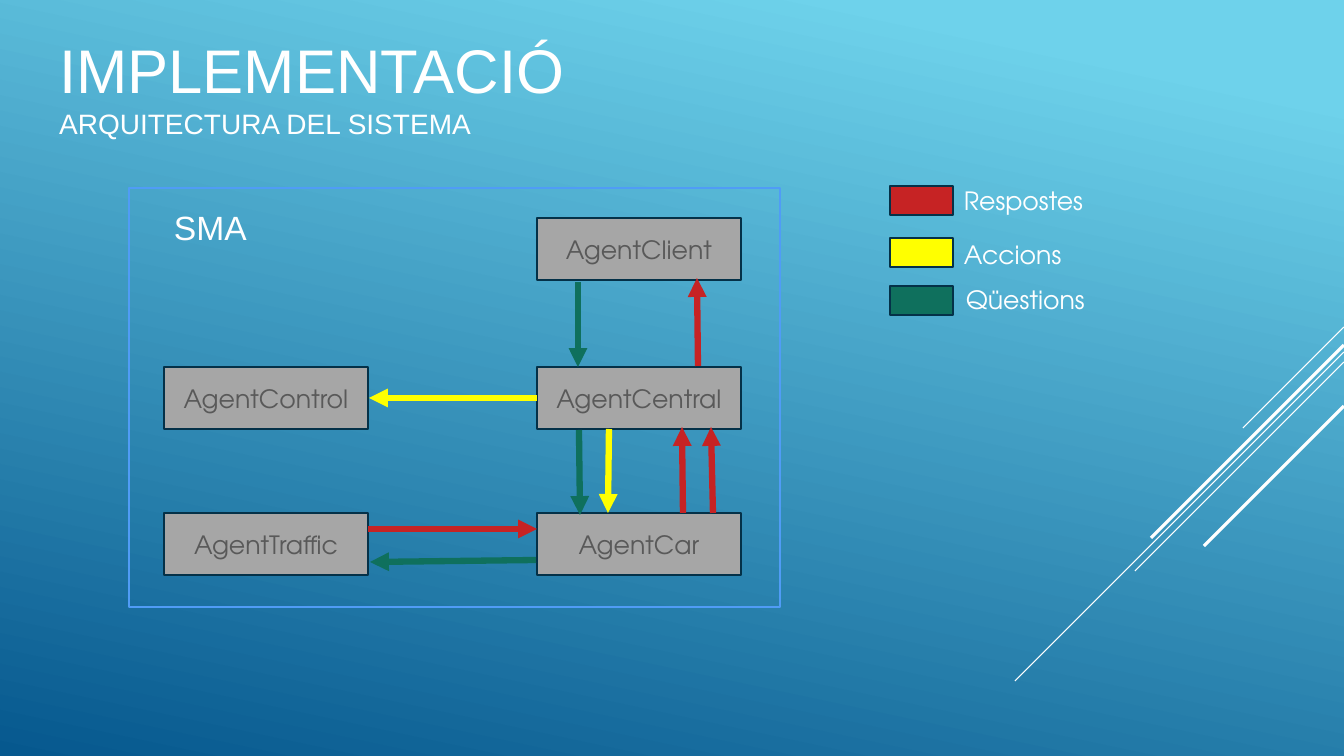
from lxml import etree
from pptx import Presentation
from pptx.dml.color import RGBColor
from pptx.enum.shapes import MSO_CONNECTOR, MSO_SHAPE
from pptx.enum.text import MSO_ANCHOR, PP_ALIGN
from pptx.oxml.ns import qn
from pptx.util import Pt

PX = 914400 / 100.8
SLIDE_W, SLIDE_H = 1344, 756
COLORS = {
    "sky": "6ED2EB", "deep": "06588E", "white": "FFFFFF", "black": "000000",
    "agent": "A6A6A6", "agent_text": "595959", "outline": "043148",
    "system": "509CF6",
    "answer": "C62324", "action": "FFFF00", "question": "0F705D",
}
HEADING_FONT, BODY_FONT = "Arial", "TeX Gyre Adventor"

TITLE = [("IMPLEMENTACIÓ", 44), ("ARQUITECTURA DEL SISTEMA", 20)]
TITLE_BOX = (49, 0, 797, 162)
SYSTEM_LABEL, SYSTEM_LABEL_BOX = "SMA", (164, 202, 107, 50)
SYSTEM_FRAME = (129, 188, 651, 419)

COLUMNS, ROWS = (164, 537), (218, 367, 513)
AGENT_SIZE = (204, 62)
AGENTS = [  # name, column, row
    ("AgentClient", 1, 0), ("AgentCentral", 1, 1), ("AgentCar", 1, 2),
    ("AgentControl", 0, 1), ("AgentTraffic", 0, 2),
]
MESSAGES = [  # kind, start, end
    ("question", (578, 282), (578, 367)),
    ("answer", (698, 366), (697, 278)),
    ("action", (537, 398), (369, 398)),
    ("question", (536, 560), (370, 562)),
    ("answer", (368, 529), (537, 529)),
    ("question", (579, 430), (580, 515)),
    ("answer", (683, 513), (682, 427)),
    ("action", (609, 429), (608, 513)),
    ("answer", (713, 513), (711, 427)),
]
SWATCH_X, SWATCH_SIZE = 890, (63, 29)
LABEL_SIZE = (239, 40)
LEGEND = [  # kind, text, swatch top, label position
    ("answer", "Respostes", 186, (954, 180)),
    ("action", "Accions", 238, (954, 234)),
    ("question", "Qüestions", 286, (956, 279)),
]
DIAGONALS = [  # top at the right edge, run at 45 degrees, width in points
    (327, 101, 0.75), (352, 329, 0.75), (362, 209, 0.75),
    (345, 193, 2.25), (406, 140, 2.25),
]


def px(*lengths):
    return [round(length * PX) for length in lengths]


def rgb(color):
    return RGBColor.from_string(COLORS[color])


def add_run(paragraph, text, size, font, color, shadow=False):
    run = paragraph.add_run()
    run.text = text
    run.font.size = Pt(size)
    run.font.color.rgb = rgb(color)
    if shadow:
        effects = etree.SubElement(run.font._element, qn("a:effectLst"))
        outer = etree.SubElement(effects, qn("a:outerShdw"), blurRad="38100",
                                 dist="38100", dir="2700000", algn="tl")
        tint = etree.SubElement(outer, qn("a:srgbClr"), val=COLORS["black"])
        etree.SubElement(tint, qn("a:alpha"), val="43000")
    run.font.name = font


def add_rect(box, fill, line):
    rect = slide.shapes.add_shape(MSO_SHAPE.RECTANGLE, *px(*box))
    rect.shadow.inherit = False
    if fill:
        rect.fill.solid()
        rect.fill.fore_color.rgb = rgb(fill)
    else:
        rect.fill.background()
    rect.line.color.rgb = rgb(line)
    rect.line.width = Pt(1.25)
    return rect


def add_label(box, *run):
    frame = slide.shapes.add_textbox(*px(*box)).text_frame
    frame.word_wrap = True
    add_run(frame.paragraphs[0], *run)


def add_line(start, end, color, width, arrow=False):
    line = slide.shapes.add_connector(MSO_CONNECTOR.STRAIGHT, *px(*start, *end))
    line.line.color.rgb = rgb(color)
    line.line.width = Pt(width)
    if arrow:
        etree.SubElement(line.line._get_or_add_ln(), qn("a:tailEnd"), type="triangle")
    etree.SubElement(line._element.spPr, qn("a:effectLst"))


prs = Presentation()
prs.slide_width, prs.slide_height = px(SLIDE_W, SLIDE_H)
slide = prs.slides.add_slide(prs.slide_layouts[5])

background = slide.background.fill
background.gradient()
background.gradient_angle = 360 - 102
for stop, (color, position) in zip(background.gradient_stops,
                                   [("sky", 0.1), ("deep", 1)]):
    stop.color.rgb = rgb(color)
    stop.position = position

for top, reach, width in DIAGONALS:
    add_line((SLIDE_W, top), (SLIDE_W - reach, top + reach), "white", width)

title = slide.shapes.title
title.left, title.top, title.width, title.height = px(*TITLE_BOX)
heading = title.text_frame
heading.word_wrap = True
heading.vertical_anchor = MSO_ANCHOR.MIDDLE
heading.margin_top = px(15)[0]
heading_lines = heading.paragraphs[0]
heading_lines.alignment = PP_ALIGN.LEFT
for index, (text, size) in enumerate(TITLE):
    if index:
        heading_lines.add_line_break()
    add_run(heading_lines, text, size, HEADING_FONT, "white", True)

for name, column, row in AGENTS:
    agent = add_rect((COLUMNS[column], ROWS[row], *AGENT_SIZE), "agent", "outline")
    agent.text_frame.vertical_anchor = MSO_ANCHOR.MIDDLE
    caption = agent.text_frame.paragraphs[0]
    caption.alignment = PP_ALIGN.CENTER
    add_run(caption, name, 18, BODY_FONT, "agent_text")

for kind, start, end in MESSAGES:
    add_line(start, end, kind, 4.5, arrow=True)

for kind, text, swatch_top, label_at in LEGEND:
    add_rect((SWATCH_X, swatch_top, *SWATCH_SIZE), kind, "outline")
    add_label((*label_at, *LABEL_SIZE), text, 18, BODY_FONT, "white")

add_rect(SYSTEM_FRAME, None, "system")
add_label(SYSTEM_LABEL_BOX, SYSTEM_LABEL, 24, HEADING_FONT, "white", True)

prs.save("out.pptx")
